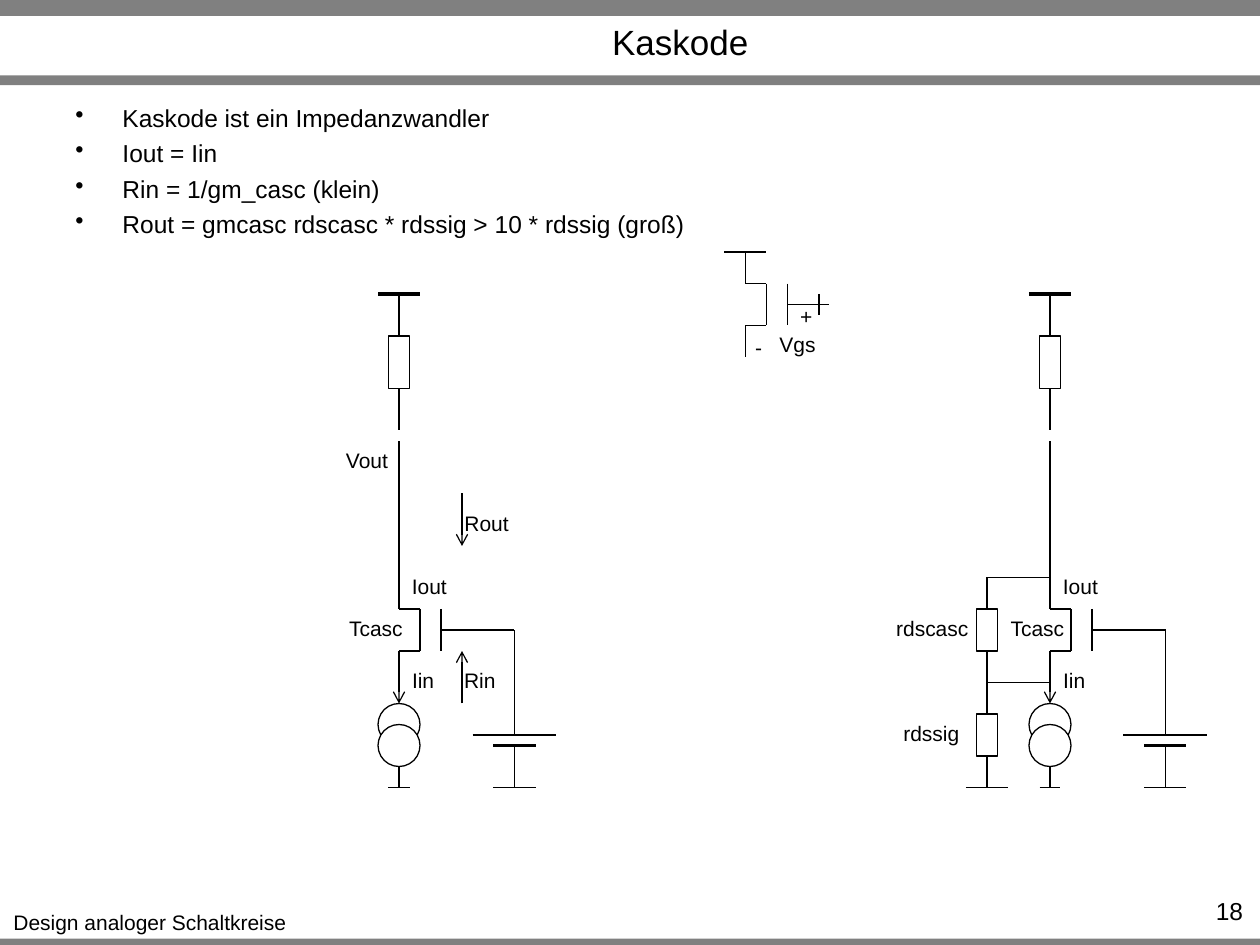
from dataclasses import dataclass

from lxml import etree
from pptx import Presentation
from pptx import util as u
from pptx.dml.color import RGBColor
from pptx.enum import shapes, text
from pptx.oxml.ns import qn


@dataclass(frozen=True)
class Theme:
    font: str = "Arial"
    ink: RGBColor = RGBColor(0, 0, 0)
    paper: RGBColor = RGBColor(255, 255, 255)
    bar: RGBColor = RGBColor(128, 128, 128)
    title: int = 20
    body: int = 14
    label: int = 12
    thin: float = 0.75
    supply: float = 1.75
    plate: float = 2


def grid(steps):
    return u.Cm(steps * 2.54 / 12)


class CircuitSlide:
    def __init__(self, page, theme):
        self.page = page
        self.theme = theme

    def bar(self, top, height):
        bar = self.page.shapes.add_shape(
            shapes.MSO_SHAPE.RECTANGLE, 0, u.Cm(top), u.Cm(25.4), u.Cm(height))
        bar.shadow.inherit = False
        bar.fill.solid()
        bar.fill.fore_color.rgb = self.theme.bar
        bar.line.fill.background()

    def text(self, lines, place, size, align=text.PP_ALIGN.LEFT,
             anchor=text.MSO_ANCHOR.TOP, wrap=True, bullets=False):
        box = self.page.shapes.add_textbox(*place)
        frame = box.text_frame
        frame.text = "\n".join(lines)
        frame.word_wrap = wrap
        frame.vertical_anchor = anchor
        for number, para in enumerate(frame.paragraphs):
            para.alignment = align
            if bullets:
                if number:
                    para.space_before = u.Pt(3.5)
                props = para._p.get_or_add_pPr()
                props.set("marL", str(u.Cm(0.95)))
                props.set("indent", str(-u.Cm(0.95)))
                etree.SubElement(props, qn("a:buChar")).set("char", "•")
            for span in para.runs:
                span.font.name = self.theme.font
                span.font.size = u.Pt(size)
                span.font.color.rgb = self.theme.ink

    def label(self, words, left, top, width):
        self.text([words], (grid(left), grid(top), grid(width), u.Cm(0.77)),
                  self.theme.label, text.PP_ALIGN.CENTER, wrap=False)

    def wire(self, x1, y1, x2, y2, width=None, arrow=False):
        wire = self.page.shapes.add_connector(
            shapes.MSO_CONNECTOR.STRAIGHT, grid(x1), grid(y1), grid(x2), grid(y2))
        wire.line.color.rgb = self.theme.ink
        wire.line.width = u.Pt(width or self.theme.thin)
        if arrow:
            etree.SubElement(wire.line._get_or_add_ln(), qn("a:tailEnd")).set("type", "arrow")
        etree.SubElement(wire._element.spPr, qn("a:effectLst"))
        return wire

    def outline(self, preset, left, top, width, height, filled=False):
        part = self.page.shapes.add_shape(
            preset, grid(left), grid(top), grid(width), grid(height))
        part.shadow.inherit = False
        if filled:
            part.fill.solid()
            part.fill.fore_color.rgb = self.theme.paper
        else:
            part.fill.background()
        part.line.color.rgb = self.theme.ink
        part.line.width = u.Pt(self.theme.thin)
        return part

    def resistor(self, x, top, height, lead):
        body = self.outline(shapes.MSO_SHAPE.RECTANGLE, x - 1, top, 2, height)
        self.wire(x, top - lead, x, top).end_connect(body, 0)
        self.wire(x, top + height, x, top + height + lead).begin_connect(body, 2)

    def transistor(self, x, y):
        self.wire(x, y - 5, x, y - 2)
        self.wire(x, y - 2, x + 2, y - 2)
        self.wire(x + 2, y - 2, x + 2, y + 2)
        self.wire(x, y + 2, x + 2, y + 2)
        self.wire(x, y + 2, x, y + 5)
        self.wire(x + 4, y - 2, x + 4, y + 2)
        self.wire(x + 4, y, x + 8, y)

    def current_source(self, x, top):
        for offset in (0, 2):
            self.outline(shapes.MSO_SHAPE.OVAL, x - 2, top + offset, 4, 4, filled=True)
        self.wire(x, top + 6, x, top + 8)
        self.wire(x - 1, top + 8, x + 1, top + 8)

    def battery(self, x, top):
        self.wire(x - 4, top, x + 4, top)
        self.wire(x - 2, top + 1, x + 2, top + 1, self.theme.plate)
        self.wire(x, top + 1, x, top + 5)
        self.wire(x - 2, top + 5, x + 2, top + 5)

    def cascode(self, x):
        self.wire(x - 2, 28, x + 2, 28, self.theme.supply)
        self.resistor(x, 32, 5, 4)
        self.wire(x, 42, x, 55.8)
        self.transistor(x, 60)
        self.wire(x, 65, x, 67, arrow=True)
        self.current_source(x, 67)
        self.wire(x + 8, 60, x + 11, 60)
        self.wire(x + 11, 60, x + 11, 70)
        self.battery(x + 11, 70)
        self.label("Iout", x, 54, 5.8)
        self.label("Iin", x, 63, 4.6)

    def output_resistances(self, x, axis):
        for top in (58, 68):
            self.resistor(x, top, 4, 3)
            self.wire(x, top - 3, axis, top - 3)
        self.wire(x - 2, 75, x + 2, 75)

    def gate_voltage(self, x, y):
        self.transistor(x, y)
        self.wire(x - 2, y - 5, x + 2, y - 5)
        self.wire(x + 7, y - 1, x + 7, y + 1)
        self.label("Vgs", x + 2, y + 2, 5.9)
        self.label("+", x + 4, y - 0.7, 3.6)
        self.label("-", x - 0.3, y + 2.3, 3.1)


def main():
    deck = Presentation()
    deck.slide_width, deck.slide_height = u.Cm(25.4), u.Cm(19.05)
    theme = Theme()
    slide = CircuitSlide(deck.slides.add_slide(deck.slide_layouts[6]), theme)

    for top, height in ((18.92, 0.13), (0, 0.32), (1.52, 0.2)):
        slide.bar(top, height)
    slide.text(["Design analoger Schaltkreise"],
               (0, u.Cm(18.21), u.Cm(6.05), u.Cm(0.77)),
               theme.label, text.PP_ALIGN.CENTER, wrap=False)
    slide.text(["Kaskode"], (u.Cm(3.3), u.Cm(0.36), u.Cm(20.83), u.Cm(0.97)),
               theme.title, text.PP_ALIGN.CENTER, text.MSO_ANCHOR.MIDDLE)
    slide.text(["Kaskode ist ein Impedanzwandler",
                "Iout = Iin",
                "Rin = 1/gm_casc (klein)",
                "Rout = gmcasc rdscasc * rdssig > 10 * rdssig (groß)"],
               (u.Cm(1.27), u.Cm(1.95), u.Cm(22.86), u.Cm(2.3)),
               theme.body, bullets=True)
    slide.text(["18"], (u.Cm(23.11), u.Cm(17.93), u.Cm(2.2), u.Cm(0.6)),
               theme.body, text.PP_ALIGN.RIGHT)

    left_axis, right_axis = 38, 100
    for axis in (left_axis, right_axis):
        slide.cascode(axis)
    slide.output_resistances(94, right_axis)
    slide.gate_voltage(71, 29)
    slide.wire(44, 67, 44, 62, arrow=True)
    slide.wire(44, 47, 44, 52, arrow=True)
    for words, left, top, width in (
            ("Vout", 31.7, 42, 6.5), ("Tcasc", 32, 58, 7.6),
            ("Rout", 43, 48, 6.7), ("Rin", 43, 63, 5.4),
            ("Tcasc", 95, 58, 7.6), ("rdscasc", 84.1, 58, 9.4),
            ("rdssig", 84.8, 68, 7.8)):
        slide.label(words, left, top, width)
    deck.save("out.pptx")


if __name__ == "__main__":
    main()
